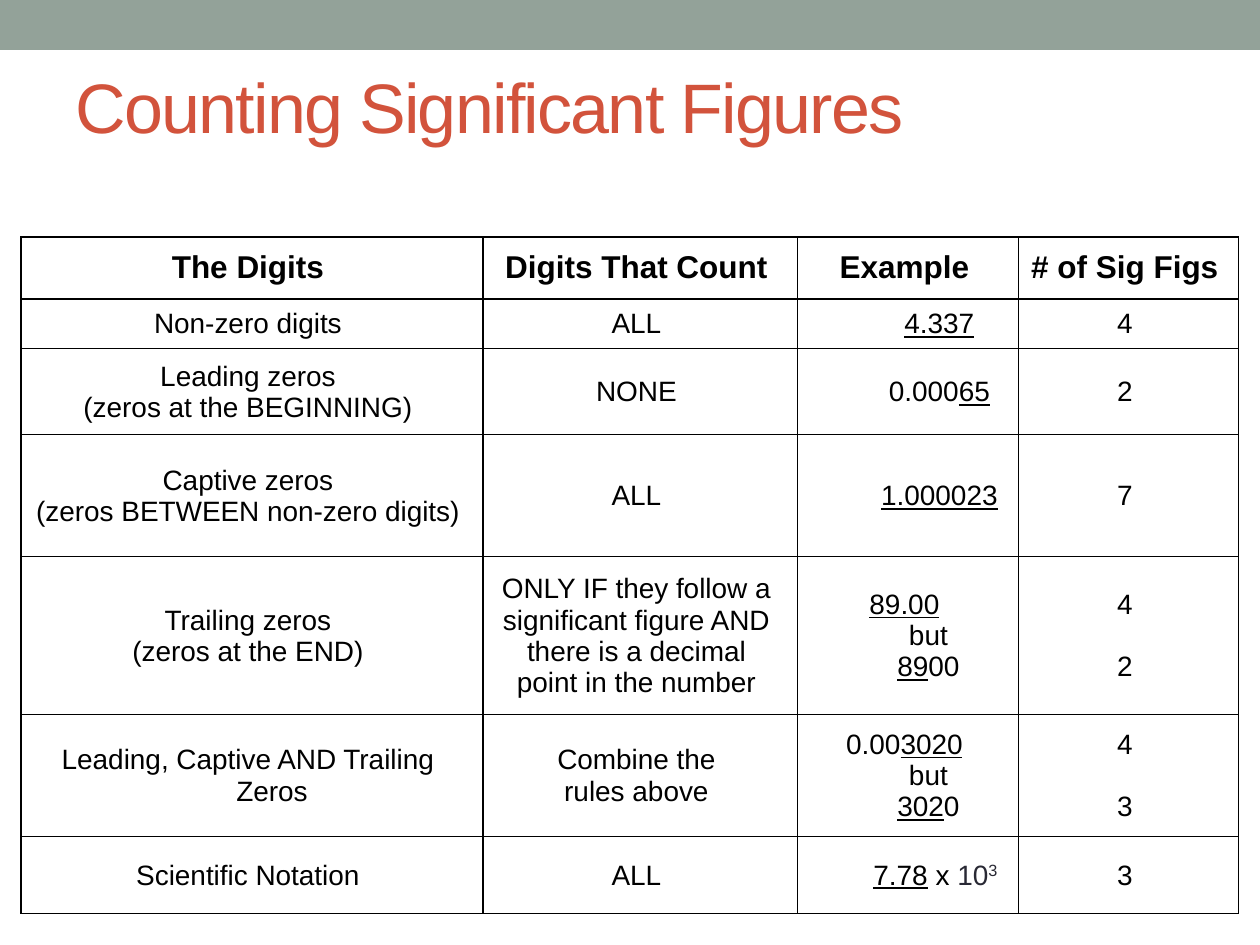
from lxml.etree import SubElement
from pptx import Presentation
from pptx.dml.color import RGBColor
from pptx.enum.shapes import MSO_SHAPE
from pptx.enum.text import MSO_ANCHOR, PP_ALIGN
from pptx.oxml.ns import qn
from pptx.util import Pt

PX = 914400 // 126  # EMU per px
FONT = "Arial"
COLORS = {"band": "93A299", "title": "D2533C", "text": "000000",
          "power": "292934", "border": "000000"}

# Run styles
COUNTED, POWER, EXPONENT = "counted", "power", "exponent"
BREAK = "\n"

TITLE = "Counting Significant Figures"
HEADINGS = ["The Digits", "Digits That Count", "Example", "# of Sig Figs"]

# Each rule: digits, what counts, example runs, example shift in px, figures
RULES = [
    (["Non-zero digits"], ["ALL"], [("4.337", COUNTED)], 70, ["4"]),
    (["Leading zeros", "(zeros at the BEGINNING)"], ["NONE"],
     ["0.000", ("65", COUNTED)], 70, ["2"]),
    (["Captive zeros", "(zeros BETWEEN non-zero digits)"], ["ALL"],
     [("1.000023", COUNTED)], 70, ["7"]),
    (["Trailing zeros", "(zeros at the END)"],
     ["ONLY IF they follow a", "significant figure AND",
      "there is a decimal", "point in the number"],
     [("89.00", COUNTED), BREAK, "but", BREAK, ("89", COUNTED), "00"], 0,
     ["4", "2"]),
    (["Leading, Captive AND Trailing Zeros"], ["Combine the", "rules above"],
     ["0.00", ("3020", COUNTED), BREAK, "but", BREAK, ("302", COUNTED), "0"], 0,
     ["4", "3"]),
    (["Scientific Notation"], ["ALL"],
     [("7.78", COUNTED), " x ", ("10", POWER), ("3", EXPONENT)], 62, ["3"]),
]

TABLE_LEFT, TABLE_TOP = 21, 237
COLUMN_WIDTHS = [462, 315, 221, 220]
ROW_HEIGHTS = [62, 50, 86, 122, 158, 122, 77]
HANGING = 48
FIGURE_GAP = 31


def rgb(name):
    return RGBColor.from_string(COLORS[name])


def add_run(paragraph, text, size, color="text", bold=False):
    run = paragraph.add_run()
    run.text = text
    run.font.name = FONT
    run.font.size = Pt(size)
    run.font.bold = bold
    run.font.color.rgb = rgb(color)
    return run


def add_borders(cell):
    properties = cell._tc.get_or_add_tcPr()
    for index, side in enumerate(("lnL", "lnR", "lnT", "lnB")):
        line = properties.makeelement(qn(f"a:{side}"), {"w": str(Pt(0.75))})
        fill = SubElement(line, qn("a:solidFill"))
        SubElement(fill, qn("a:srgbClr"), val=COLORS["border"])
        properties.insert(index, line)


def fill_cell(cell, paragraphs, size=16, bold=False, shift=0, gap=0):
    """Write paragraphs, each a list of runs, with a hanging indent."""
    cell.fill.background()
    add_borders(cell)
    cell.vertical_anchor = MSO_ANCHOR.MIDDLE
    cell.margin_left, cell.margin_right = 5 * PX, 13 * PX
    frame = cell.text_frame
    for index, runs in enumerate(paragraphs):
        paragraph = frame.add_paragraph() if index else frame.paragraphs[0]
        paragraph.alignment = PP_ALIGN.CENTER
        if index and gap:
            paragraph.space_before = gap * PX
        indents = paragraph._p.get_or_add_pPr()
        indents.set("marL", str(HANGING * PX))
        indents.set("indent", str((shift - HANGING) * PX))
        for item in runs:
            if item == BREAK:
                paragraph.add_line_break()
                continue
            text, style = (item, None) if isinstance(item, str) else item
            color = "power" if style in (POWER, EXPONENT) else "text"
            run = add_run(paragraph, text, size, color, bold)
            if style == COUNTED:
                run.font.underline = True
            elif style == EXPONENT:
                run._r.get_or_add_rPr().set("baseline", "30000")


def as_paragraphs(lines):
    return [[line] for line in lines]


presentation = Presentation()
presentation.slide_width, presentation.slide_height = 1260 * PX, 945 * PX
slide = presentation.slides.add_slide(presentation.slide_layouts[6])

# Top band
band = slide.shapes.add_shape(MSO_SHAPE.RECTANGLE, 0, 0, 1260 * PX, 50 * PX)
band.shadow.inherit = False
band.fill.solid()
band.fill.fore_color.rgb = rgb("band")
band.line.fill.background()

# Title
title = slide.shapes.add_textbox(63 * PX, 16 * PX, 1040 * PX, 179 * PX).text_frame
title.word_wrap = True
title.vertical_anchor = MSO_ANCHOR.MIDDLE
title_run = add_run(title.paragraphs[0], TITLE, 40, "title")
title_run._r.get_or_add_rPr().set("spc", "-100")

# Table of rules
table = slide.shapes.add_table(
    len(ROW_HEIGHTS), len(COLUMN_WIDTHS), TABLE_LEFT * PX, TABLE_TOP * PX,
    sum(COLUMN_WIDTHS) * PX, sum(ROW_HEIGHTS) * PX).table
for column, width in zip(table.columns, COLUMN_WIDTHS):
    column.width = width * PX
for row, height in zip(table.rows, ROW_HEIGHTS):
    row.height = height * PX

for column, heading in enumerate(HEADINGS):
    fill_cell(table.cell(0, column), [[heading]], size=18, bold=True)

for row, (digits, counting, example, shift, figures) in enumerate(RULES, 1):
    fill_cell(table.cell(row, 0), as_paragraphs(digits))
    fill_cell(table.cell(row, 1), as_paragraphs(counting))
    fill_cell(table.cell(row, 2), [example], shift=shift)
    fill_cell(table.cell(row, 3), as_paragraphs(figures), gap=FIGURE_GAP)

presentation.save("out.pptx")
